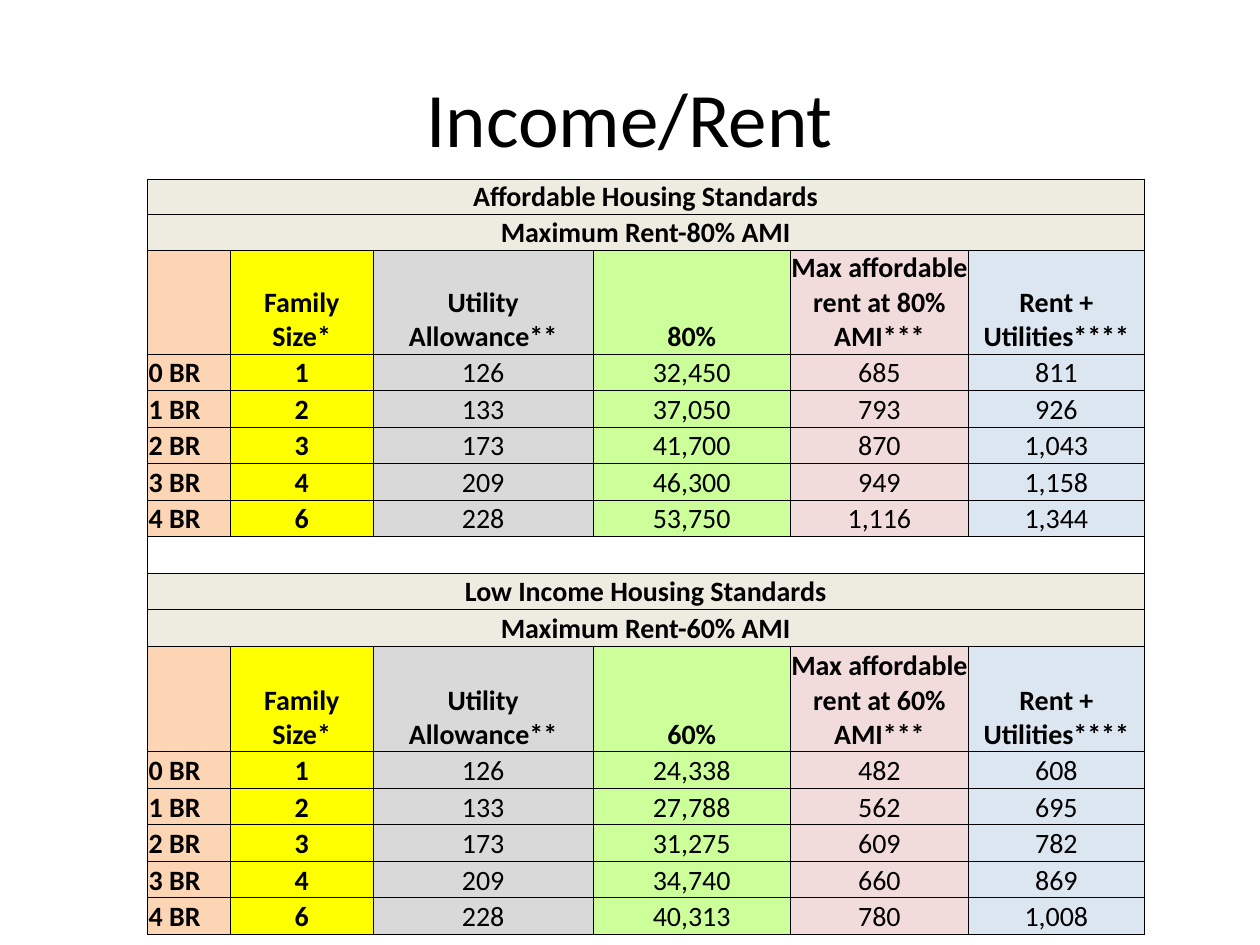
from lxml.etree import SubElement
from pptx import Presentation
from pptx.dml.color import RGBColor
from pptx.enum.text import MSO_ANCHOR, PP_ALIGN
from pptx.oxml.ns import qn
from pptx.util import Inches, Pt

BLACK = RGBColor(0x00, 0x00, 0x00)
BEIGE = RGBColor(0xEE, 0xEC, 0xE1)
PEACH = RGBColor(0xFC, 0xD5, 0xB4)
YELLOW = RGBColor(0xFF, 0xFF, 0x00)
GRAY = RGBColor(0xD9, 0xD9, 0xD9)
GREEN = RGBColor(0xCC, 0xFF, 0x99)
PINK = RGBColor(0xF2, 0xDC, 0xDB)
BLUE = RGBColor(0xDC, 0xE6, 0xF1)
COLUMN_FILLS = [PEACH, YELLOW, GRAY, GREEN, PINK, BLUE]
COLUMN_WIDTHS = [0.66, 1.13, 1.75, 1.56, 1.42, 1.39]
LAST_COLUMN = len(COLUMN_WIDTHS) - 1
ROW_HEIGHT = 0.29
SPECIAL_HEIGHTS = {0: 0.25, 1: 0.28, 2: 0.65, 10: 0.84}
FONT = "Calibri"

UNITS = [("0 BR", "1", "126"), ("1 BR", "2", "133"), ("2 BR", "3", "173"),
         ("3 BR", "4", "209"), ("4 BR", "6", "228")]
SECTIONS = [
    ("Affordable Housing Standards", "80%",
     [("32,450", "685", "811"), ("37,050", "793", "926"), ("41,700", "870", "1,043"),
      ("46,300", "949", "1,158"), ("53,750", "1,116", "1,344")]),
    ("Low Income Housing Standards", "60%",
     [("24,338", "482", "608"), ("27,788", "562", "695"), ("31,275", "609", "782"),
      ("34,740", "660", "869"), ("40,313", "780", "1,008")]),
]


def write_text(text_frame, text, size=16, bold=False, align=PP_ALIGN.CENTER):
    paragraph = text_frame.paragraphs[0]
    paragraph.alignment = align
    if not text:
        # An empty cell needs its size on the paragraph end to keep its row low
        SubElement(paragraph._p, qn("a:endParaRPr"), sz=str(size * 100))
        return
    run = paragraph.add_run()
    run.text = text
    run.font.name = FONT
    run.font.size = Pt(size)
    run.font.bold = bold
    run.font.color.rgb = BLACK


def format_cell(cell, fill=None, sides="LRTB"):
    """Set margins, anchor, fill, and black borders on the named sides."""
    cell.margin_left = cell.margin_right = cell.margin_top = Inches(0.01)
    cell.margin_bottom = 0
    cell.vertical_anchor = MSO_ANCHOR.BOTTOM
    properties = cell._tc.get_or_add_tcPr()
    for side in "LRTB":
        line = SubElement(properties, qn(f"a:ln{side}"), w=str(Pt(0.5)))
        if side in sides:
            solid = SubElement(line, qn("a:solidFill"))
            SubElement(solid, qn("a:srgbClr"), val=str(BLACK))
        else:
            SubElement(line, qn("a:noFill"))
    if fill is None:
        cell.fill.background()
    else:
        cell.fill.solid()
        cell.fill.fore_color.rgb = fill


presentation = Presentation()
presentation.slide_width = Inches(10)
presentation.slide_height = Inches(7.5)
slide = presentation.slides.add_slide(presentation.slide_layouts[5])

title = slide.shapes.title
title.left, title.top = Inches(0.5), Inches(0.3)
title.width, title.height = Inches(9), Inches(1.25)
title.text_frame.vertical_anchor = MSO_ANCHOR.MIDDLE
write_text(title.text_frame, "Income/Rent", size=44)

# Rows of the table; a banner has one text, the gap between sections has none
rows = []
for heading, percent, amounts in SECTIONS:
    if rows:
        rows.append([])
    rows.append([heading])
    rows.append([f"Maximum Rent-{percent} AMI"])
    rows.append(["", "Family Size*", "Utility Allowance**", percent,
                 f"Max affordable rent at {percent} AMI***", "Rent + Utilities****"])
    rows.extend(unit + amount for unit, amount in zip(UNITS, amounts))

heights = [SPECIAL_HEIGHTS.get(index, ROW_HEIGHT) for index in range(len(rows))]
# The second section's column headings follow its two banners
header_rows = [index for index, row in enumerate(rows) if row and row[0] == ""]
heights[10] = ROW_HEIGHT
heights[header_rows[1]] = SPECIAL_HEIGHTS[10]

table = slide.shapes.add_table(
    len(rows), len(COLUMN_WIDTHS), Inches(1.17), Inches(1.42),
    Inches(sum(COLUMN_WIDTHS)), Inches(sum(heights))).table
table.first_row = False
table.horz_banding = False
for column, width in zip(table.columns, COLUMN_WIDTHS):
    column.width = Inches(width)

for row_index, (texts, height) in enumerate(zip(rows, heights)):
    table.rows[row_index].height = Inches(height)
    cells = list(table.rows[row_index].cells)
    if len(texts) == 1:
        cells[0].merge(cells[-1])
    for column_index, cell in enumerate(cells):
        if not texts:
            sides = "TB" + "L" * (column_index == 0) + "R" * (column_index == LAST_COLUMN)
            format_cell(cell, sides=sides)
        elif len(texts) == 1:
            format_cell(cell, BEIGE)
        else:
            format_cell(cell, COLUMN_FILLS[column_index])
        text = texts[column_index] if column_index < len(texts) else ""
        is_heading = len(texts) == 1 or row_index in header_rows
        is_unit = column_index == 0 and not is_heading
        write_text(cell.text_frame, text, bold=is_heading or column_index < 2,
                   align=PP_ALIGN.LEFT if is_unit else PP_ALIGN.CENTER)

presentation.save("out.pptx")
